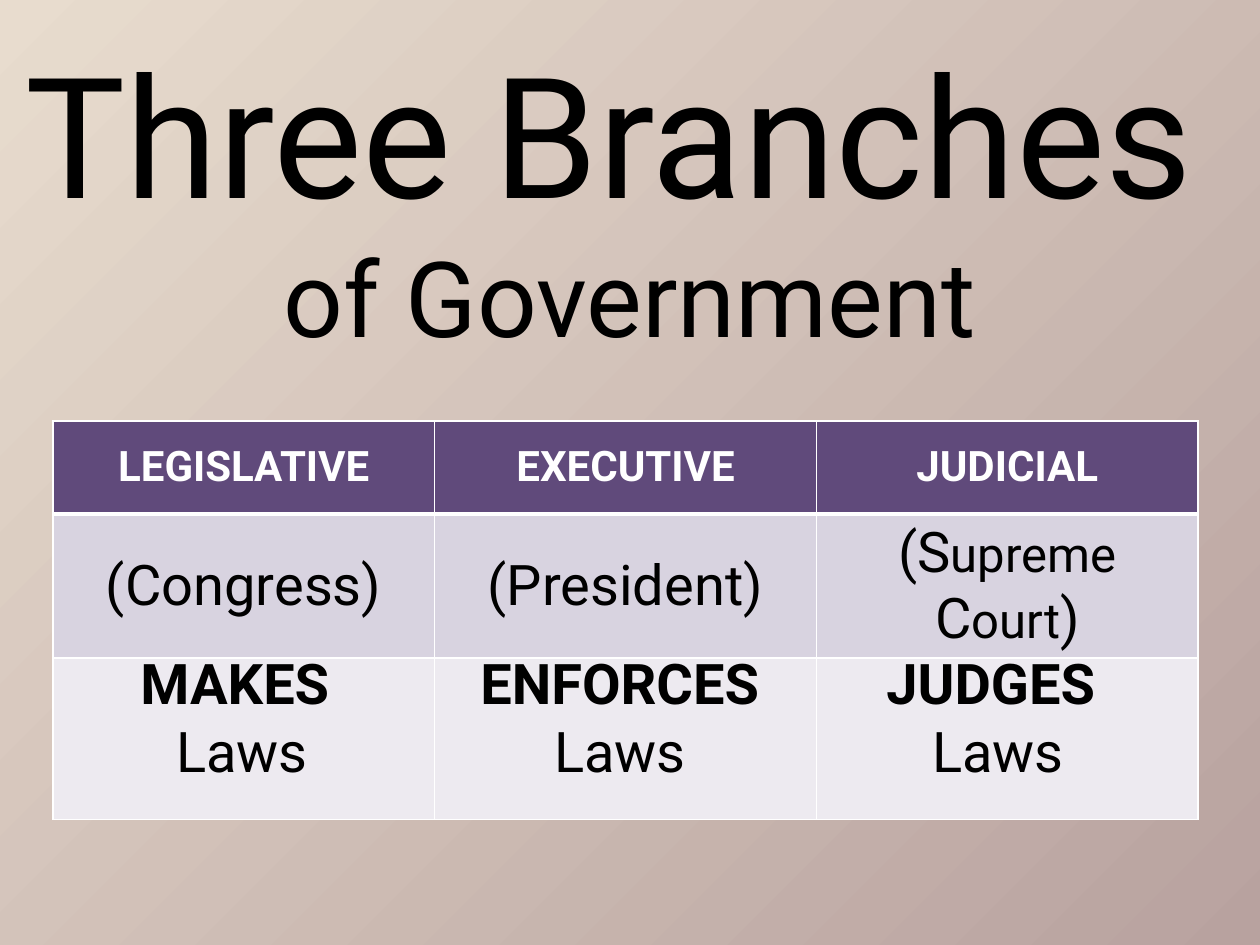
from lxml import etree
from pptx import Presentation
from pptx.dml.color import RGBColor
from pptx.enum.text import MSO_ANCHOR, PP_ALIGN
from pptx.oxml.ns import qn
from pptx.util import Inches, Pt

CENTER = PP_ALIGN.CENTER
MIDDLE, TOP = MSO_ANCHOR.MIDDLE, MSO_ANCHOR.TOP
FONT = "Roboto"
BLACK, WHITE = "000000", "FFFFFF"
BACKGROUND = ("E8DCCE", "B8A29F")
BREAK = None

# Content: each text is a list of (words, size, bold) runs
TITLE = [("Three Branches ", 96, False), BREAK, ("of Government", 60, False)]
HEADERS = [[(name, 24, True)] for name in ("LEGISLATIVE", "EXECUTIVE", "JUDICIAL")]
BODIES = [
    [("(Congress)", 32, False)],
    [("(President)", 32, False)],
    [("(S", 32, False), ("upreme", 28, False), (" C", 32, False),
     ("ourt", 28, False), (")", 32, False)],
]
DUTIES = [
    [("MAKES ", 32, True), BREAK, ("Laws", 32, False)],
    [("ENFORCES", 32, True), (" Laws", 32, False)],
    [("JUDGES ", 32, True), BREAK, ("Laws", 32, False)],
]
# Rows: texts, height, fill, text colour, top and bottom border widths
ROWS = [
    (HEADERS, 0.74, "604A7B", WHITE, 1, 3),
    (BODIES, 0.92, "D8D3E0", BLACK, 3, 1),
    ([[], [], []], 1.28, "EDEAF0", BLACK, 1, 1),
]
TABLE_LEFT, TABLE_TOP, COLUMN_WIDTH = 0.42, 3.34, 3.03
DUTY_TOP, DUTY_WIDTH, DUTY_HEIGHT = 5.1, 3, 1.18


def color(value):
    return RGBColor.from_string(value)


def write(frame, runs, text_color):
    para = frame.paragraphs[0]
    para.alignment = CENTER
    for run in runs:
        if run is BREAK:
            para.add_line_break()
            continue
        words, size, bold = run
        span = para.add_run()
        span.text = words
        span.font.name = FONT
        span.font.size = Pt(size)
        span.font.bold = bold
        span.font.color.rgb = color(text_color)


def add_text(slide, place, runs, anchor):
    box = slide.shapes.add_textbox(*(Inches(part) for part in place))
    frame = box.text_frame
    frame.word_wrap = True
    frame.vertical_anchor = anchor
    write(frame, runs, BLACK)


def set_borders(cell, top, bottom):
    properties = cell._tc.get_or_add_tcPr()
    sides = (("lnL", 1), ("lnR", 1), ("lnT", top), ("lnB", bottom))
    for index, (side, width) in enumerate(sides):
        line = etree.Element(qn(f"a:{side}"), w=str(Pt(width)))
        fill = etree.SubElement(line, qn("a:solidFill"))
        etree.SubElement(fill, qn("a:srgbClr"), val=WHITE)
        properties.insert(index, line)


def add_branches(slide):
    height = sum(row[1] for row in ROWS)
    columns = len(HEADERS)
    table = slide.shapes.add_table(
        len(ROWS), columns, Inches(TABLE_LEFT), Inches(TABLE_TOP),
        Inches(columns * COLUMN_WIDTH), Inches(height)).table
    for row, (texts, row_height, fill, text_color, top, bottom) in enumerate(ROWS):
        table.rows[row].height = Inches(row_height)
        for column, runs in enumerate(texts):
            cell = table.cell(row, column)
            cell.vertical_anchor = MIDDLE
            cell.fill.solid()
            cell.fill.fore_color.rgb = color(fill)
            set_borders(cell, top, bottom)
            write(cell.text_frame, runs, text_color)


def main():
    deck = Presentation()
    deck.slide_width, deck.slide_height = Inches(10), Inches(7.5)
    slide = deck.slides.add_slide(deck.slide_layouts[6])

    # Diagonal background, light at the top left
    fill = slide.background.fill
    fill.gradient()
    fill.gradient_angle = 315
    for stop, position, value in zip(fill.gradient_stops, (0, 1), BACKGROUND):
        stop.position = position
        stop.color.rgb = color(value)

    # Table, then the duty of each branch over its last row
    add_branches(slide)
    for column, runs in enumerate(DUTIES):
        left = TABLE_LEFT + column * DUTY_WIDTH
        add_text(slide, (left, DUTY_TOP, DUTY_WIDTH, DUTY_HEIGHT), runs, TOP)

    # Title
    add_text(slide, (0, 0.17, 10, 2.75), TITLE, MIDDLE)
    deck.save("out.pptx")


if __name__ == "__main__":
    main()
